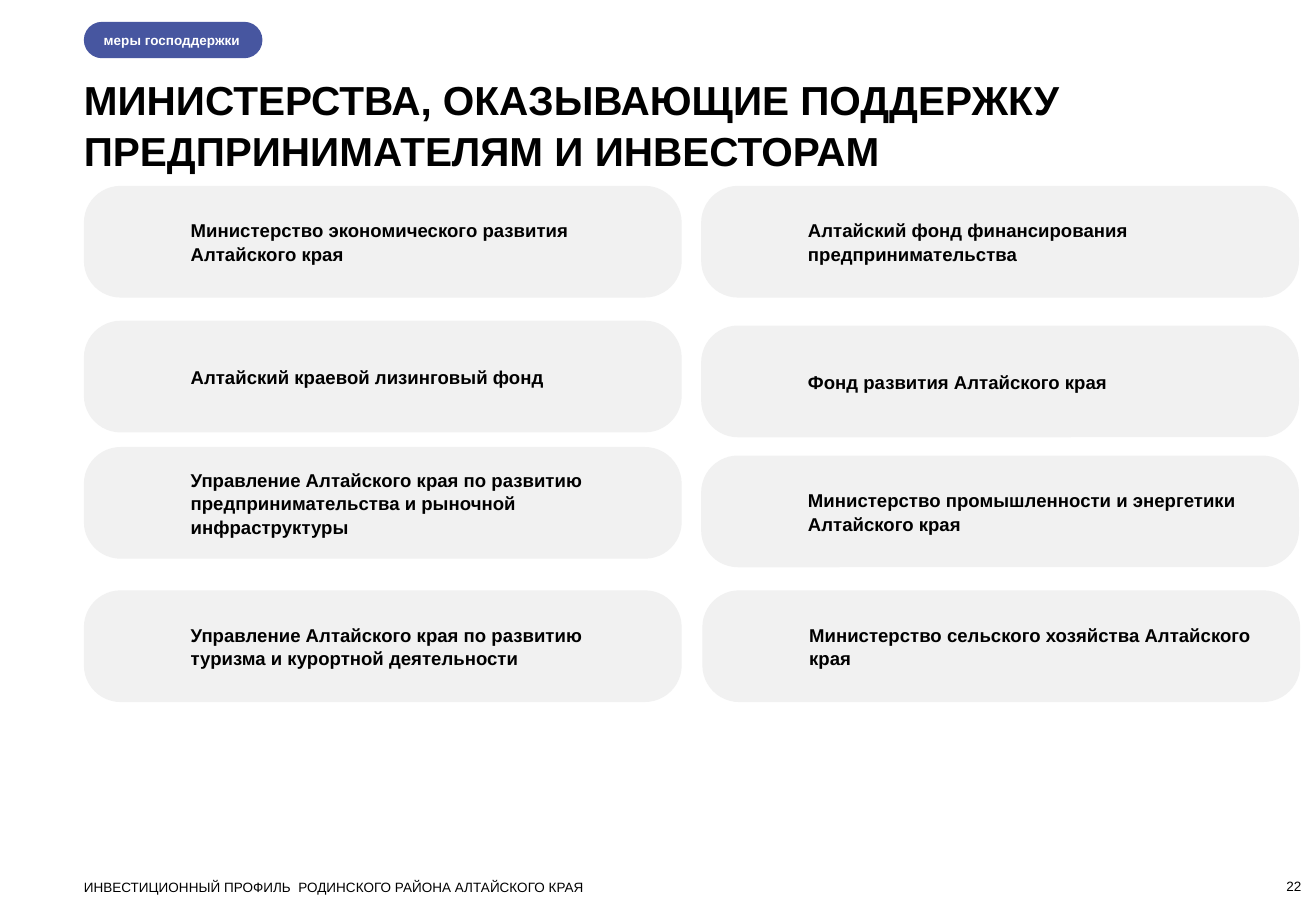
import pptx
import pptx.util
import pptx.dml.color
import pptx.enum.shapes
import pptx.enum.text

Inches = pptx.util.Inches
ANCHOR = pptx.enum.text.MSO_ANCHOR
ALIGN = pptx.enum.text.PP_ALIGN

MARGIN = 0.69
RIGHT = 10.71
CARD_W, CARD_H = 4.92, 0.92

# Cards: left, top, text
CARDS = [
    (MARGIN, 1.53, "Министерство экономического развития Алтайского края"),
    (MARGIN, 2.64, "Алтайский краевой лизинговый фонд"),
    (MARGIN, 3.68, "Управление Алтайского края по развитию предпринимательства "
                   "и рыночной инфраструктуры"),
    (MARGIN, 4.86, "Управление Алтайского края по развитию туризма "
                   "и курортной деятельности"),
    (5.77, 1.53, "Алтайский фонд финансирования предпринимательства"),
    (5.77, 2.68, "Фонд развития Алтайского края"),
    (5.77, 3.75, "Министерство промышленности и энергетики Алтайского края"),
    (5.78, 4.86, "Министерство сельского хозяйства Алтайского края"),
]


def rgb(value):
    return pptx.dml.color.RGBColor.from_string(value)


def set_text(sp, text, size, color="000000", bold=False, align=ALIGN.LEFT,
             anchor=ANCHOR.TOP, insets=(0, 0, 0, 0)):
    tf = sp.text_frame
    left, top, right, bottom = map(Inches, insets)
    frame_format = {
        "word_wrap": True, "auto_size": pptx.enum.text.MSO_AUTO_SIZE.NONE,
        "vertical_anchor": anchor, "margin_left": left, "margin_top": top,
        "margin_right": right, "margin_bottom": bottom,
    }
    for name, value in frame_format.items():
        setattr(tf, name, value)
    p = tf.paragraphs[0]
    p.alignment = align
    p.line_spacing = 1.05
    r = p.add_run()
    r.text = text
    font_format = {"name": "Arial", "size": pptx.util.Pt(size), "bold": bold}
    for name, value in font_format.items():
        setattr(r.font, name, value)
    r.font.color.rgb = rgb(color)


def add_pill(slide, box, fill, radius, text, size, **text_format):
    sp = slide.shapes.add_shape(
        pptx.enum.shapes.MSO_SHAPE.ROUNDED_RECTANGLE, *map(Inches, box))
    sp.adjustments[0] = radius
    sp.shadow.inherit = False
    sp.fill.solid()
    sp.fill.fore_color.rgb = rgb(fill)
    sp.line.fill.background()
    set_text(sp, text, size, bold=True, anchor=ANCHOR.MIDDLE, **text_format)


def add_header(slide, box):
    left, top, width, height = box
    # Section tag
    add_pill(slide, (left, top, 1.47, 0.3), "4756A0", 0.5, "меры господдержки",
             8, color="FFFFFF", insets=(0.12, 0, 0, 0))
    # Title
    title = slide.shapes.title
    place = {"left": left, "top": top + 0.42, "width": width, "height": height - 0.42}
    for name, value in place.items():
        setattr(title, name, Inches(value))
    set_text(title, "МИНИСТЕРСТВА, ОКАЗЫВАЮЩИЕ ПОДДЕРЖКУ ПРЕДПРИНИМАТЕЛЯМ И ИНВЕСТОРАМ",
             24, bold=True)


def add_card(slide, box, text):
    add_pill(slide, box, "F1F1F1", 0.33, text, 11, insets=(0.79, 0.05, 0.1, 0.05))


def add_footer(slide, box):
    left, top, width, height = box
    number_w = 0.8
    # Profile name
    name = slide.shapes.add_textbox(*map(Inches, (left, top, 8, height)))
    set_text(name, "ИНВЕСТИЦИОННЫЙ ПРОФИЛЬ  РОДИНСКОГО РАЙОНА АЛТАЙСКОГО КРАЯ", 8)
    # Page number
    number = slide.shapes.add_textbox(
        *map(Inches, (left + width - number_w, top, number_w, height)))
    set_text(number, "22", 8, align=ALIGN.RIGHT, anchor=ANCHOR.BOTTOM)


def main():
    prs = pptx.Presentation()
    prs.slide_width, prs.slide_height = Inches(10.83), Inches(7.5)
    slide = prs.slides.add_slide(prs.slide_layouts[5])
    add_header(slide, (MARGIN, 0.18, RIGHT - MARGIN, 1.23))
    for left, top, text in CARDS:
        add_card(slide, (left, top, CARD_W, CARD_H), text)
    add_footer(slide, (MARGIN, 7.23, RIGHT - MARGIN, 0.13))
    prs.save("out.pptx")


if __name__ == "__main__":
    main()
